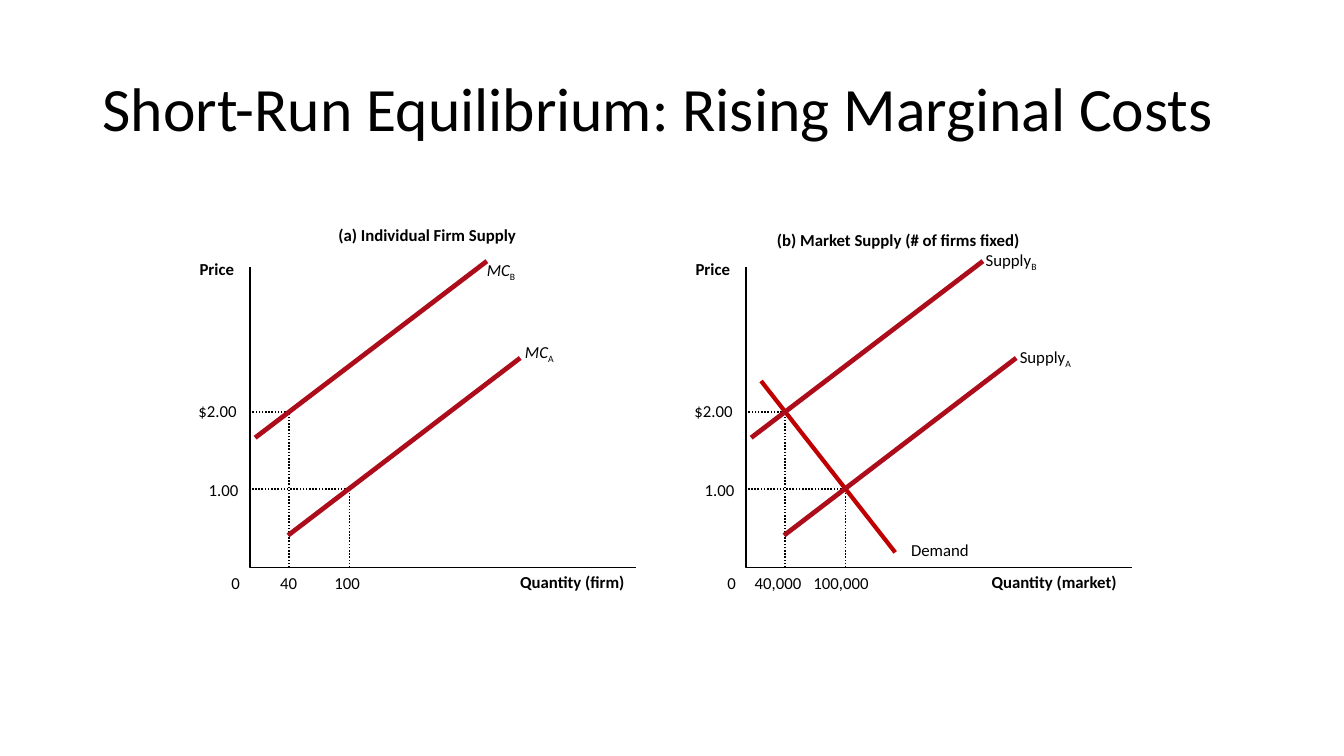
from lxml import etree
from pptx import Presentation
from pptx.dml.color import RGBColor
from pptx.enum.dml import MSO_LINE
from pptx.enum.shapes import MSO_CONNECTOR
from pptx.enum.text import MSO_ANCHOR, MSO_AUTO_SIZE, PP_ALIGN
from pptx.oxml.ns import qn
from pptx.util import Cm, Pt

BLACK = RGBColor(0x00, 0x00, 0x00)
CRIMSON = RGBColor(0xAD, 0x0D, 0x1B)
RED = RGBColor(0xC0, 0x00, 0x00)
FONT = "Calibri"
STRAIGHT = MSO_CONNECTOR.STRAIGHT
DOTTED = MSO_LINE.ROUND_DOT
MIDDLE = MSO_ANCHOR.MIDDLE
FIT_SHAPE = MSO_AUTO_SIZE.SHAPE_TO_FIT_TEXT
NO_FIT = MSO_AUTO_SIZE.NONE
LEFT = PP_ALIGN.LEFT

PANEL_STEP = 12.5
AXIS_X, AXIS_TOP, AXIS_Y, AXIS_RIGHT = 6.3, 6.73, 14.3, 16.03


def add_text(text, x, y, w, h=0.51, bold=False, italic=False, sub="",
             inset=(0, 0), wrap=False):
    tf = slide.shapes.add_textbox(Cm(x), Cm(y), Cm(w), Cm(h)).text_frame
    tf.word_wrap = wrap
    tf.auto_size = FIT_SHAPE
    tf.margin_left = tf.margin_right = Cm(inset[0])
    tf.margin_top = tf.margin_bottom = Cm(inset[1])
    p = tf.paragraphs[0]
    for part in filter(None, (text, sub)):
        r = p.add_run()
        r.text = part
        r.font.name = FONT
        r.font.size = Pt(12)
        r.font.color.rgb = BLACK
        r.font.bold = bold
        r.font.italic = italic and part == text
        if part == sub:
            r._r.get_or_add_rPr().set("baseline", "-25000")


def add_path(points, dash=None):
    points = [(Cm(x), Cm(y)) for x, y in points]
    builder = slide.shapes.build_freeform(*points[0])
    builder.add_line_segments(points[1:], close=False)
    sp = builder.convert_to_shape()
    sp.shadow.inherit = False
    sp.fill.background()
    sp.line.color.rgb = BLACK
    sp.line.width = Pt(1.13)
    if dash:
        sp.line.dash_style = dash


prs = Presentation()
prs.slide_width, prs.slide_height = Cm(33.87), Cm(19.05)
slide = prs.slides.add_slide(prs.slide_layouts[5])

title = slide.shapes.title
title.left, title.top, title.width, title.height = Cm(2.33), Cm(1.02), Cm(29.21), Cm(3.68)
tf = title.text_frame
tf.text = "Short-Run Equilibrium: Rising Marginal Costs"
tf.vertical_anchor = MIDDLE
tf.auto_size = NO_FIT
p = tf.paragraphs[0]
p.alignment = LEFT
p.line_spacing = 0.8
font = p.runs[0].font
font.name, font.size, font.color.rgb = FONT, Pt(44), BLACK

curves = [(19.18, 9.6, 22.56, 13.92, RED, 3)]
for dx in (0, PANEL_STEP):
    left = AXIS_X + dx
    add_path([(left, AXIS_TOP), (left, AXIS_Y), (AXIS_RIGHT + dx, AXIS_Y)])
    for quantity, price in ((8.81, 12.32), (7.28, 10.38)):
        x = quantity + dx
        add_path([(x, AXIS_Y), (x, price), (left, price)], dash=DOTTED)
    curves += [
        (7.26 + dx, 13.49, 13.11 + dx, 9.02, CRIMSON, 3.38),
        (6.43 + dx, 11.03, 12.27 + dx, 6.58, CRIMSON, 3.38),
    ]
    add_text("Price", 5.03 + dx, 6.52, 0.89, bold=True)
    add_text("$2.00", 5 + dx, 10.11, 0.99)
    add_text("1.00", 5.26 + dx, 12.09, 0.76)
    add_text("0", 5.83 + dx, 14.42, 0.23)

for x1, y1, x2, y2, color, width in curves:
    line = slide.shapes.add_connector(STRAIGHT, Cm(x1), Cm(y1), Cm(x2), Cm(y2))
    line.line.color.rgb = color
    line.line.width = Pt(width)
    etree.SubElement(line._element.spPr, qn("a:effectLst"))

for text, x, y, w in (
    ("(a) Individual Firm Supply", 8.53, 5.66, 4.55),
    ("(b) Market Supply (# of firms fixed)", 19.58, 5.79, 6.2),
    ("Quantity (firm)", 13.11, 14.4, 2.67),
    ("Quantity (market)", 24.99, 14.4, 3.18),
):
    add_text(text, x, y, w, bold=True)

for text, x, w in (
    ("40", 7.06, 0.43),
    ("100", 8.43, 0.66),
    ("40,000", 19.02, 1.19),
    ("100,000", 20.5, 1.42),
):
    add_text(text, x, 14.42, w)

for text, sub, x, y, w in (
    ("MC", "A", 13.23, 8.61, 0.76),
    ("MC", "B", 12.27, 6.55, 0.76),
    ("Supply", "A", 25.7, 8.74, 1.32),
    ("Supply", "B", 24.84, 6.3, 1.32),
):
    add_text(text, x, y, w, sub=sub, italic=text == "MC")

add_text("Demand", 22.71, 13.46, 2.67, h=0.76, inset=(0.25, 0.13), wrap=True)

prs.save("out.pptx")
